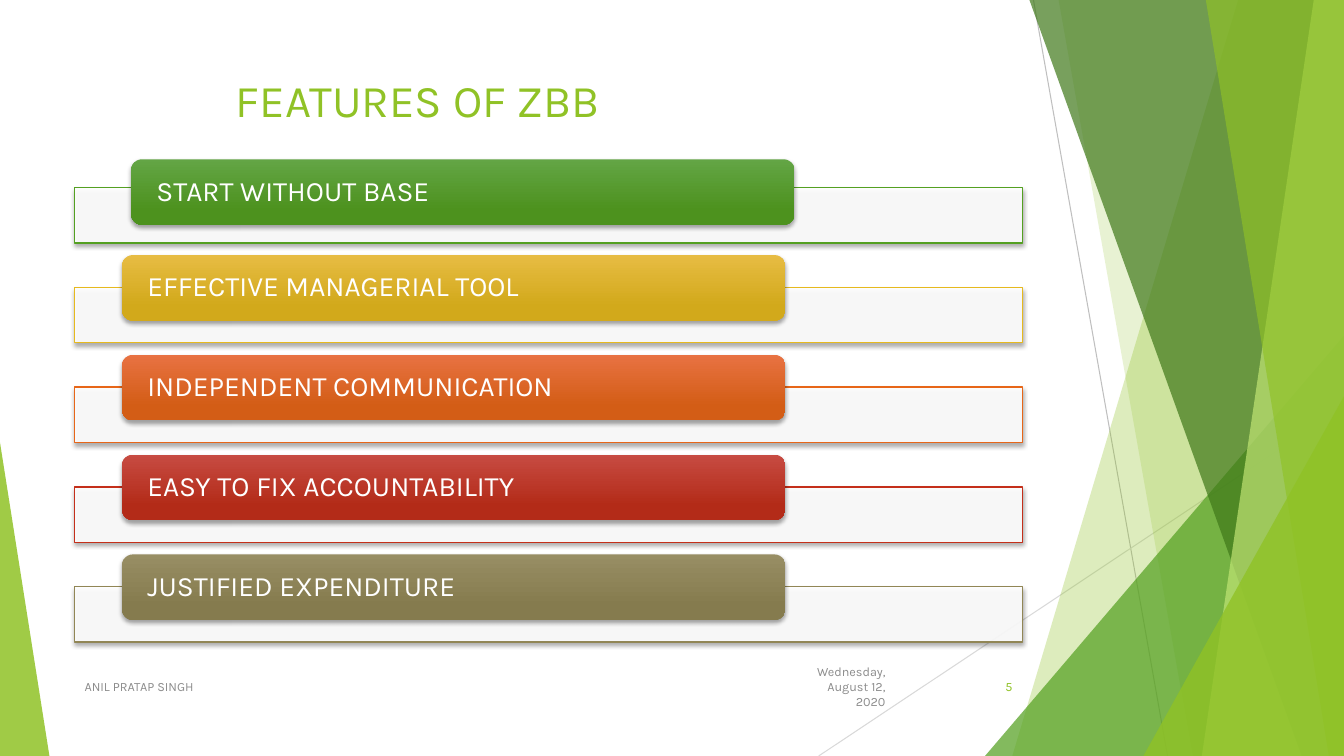
import pptx
import pptx.util
import pptx.dml.color
import pptx.enum.shapes
import pptx.enum.text
import pptx.oxml
import pptx.oxml.ns

Inches = pptx.util.Inches
Pt = pptx.util.Pt
RGBColor = pptx.dml.color.RGBColor
Shape = pptx.enum.shapes.MSO_SHAPE
Align = pptx.enum.text.PP_ALIGN
Anchor = pptx.enum.text.MSO_ANCHOR

FONT = "Karla"
WHITE = RGBColor(0xFF, 0xFF, 0xFF)
GRAY = RGBColor(0x8C, 0x8C, 0x8C)
SILVER = RGBColor(0xBF, 0xBF, 0xBF)
PALE_GRAY = RGBColor(0xD9, 0xD9, 0xD9)
LIME = RGBColor(0x90, 0xC2, 0x26)
PALE_LIME = RGBColor(0xC0, 0xE4, 0x74)
GREEN = RGBColor(0x54, 0xA0, 0x21)
DARK_GREEN = RGBColor(0x3F, 0x78, 0x19)
GOLD = RGBColor(0xE6, 0xB9, 0x1E)
ORANGE = RGBColor(0xE7, 0x66, 0x18)
RED = RGBColor(0xC4, 0x2F, 0x1A)
OLIVE = RGBColor(0x91, 0x86, 0x55)

FEATURES = [
    ("START WITHOUT BASE", GREEN, RGBColor(0x63, 0xA5, 0x45), RGBColor(0x4D, 0x92, 0x1E)),
    ("EFFECTIVE MANAGERIAL TOOL", GOLD, RGBColor(0xE7, 0xBC, 0x43), RGBColor(0xD2, 0xA9, 0x1B)),
    ("INDEPENDENT COMMUNICATION", ORANGE, RGBColor(0xE8, 0x72, 0x42), RGBColor(0xD3, 0x5D, 0x16)),
    ("EASY TO FIX ACCOUNTABILITY", RED, RGBColor(0xC7, 0x4B, 0x42), RGBColor(0xB3, 0x2B, 0x18)),
    ("JUSTIFIED EXPENDITURE", OLIVE, RGBColor(0x98, 0x8E, 0x64), RGBColor(0x85, 0x7B, 0x4E)),
]
LEFT = 0.74
ROW_PITCH = 0.99


def append_xml(parent, xml):
    namespace = pptx.oxml.ns.nsdecls("a")
    parent.append(pptx.oxml.parse_xml(xml.replace("/>", f" {namespace}/>", 1)
                                      if xml.endswith("/>") and xml.count("<") == 1
                                      else xml.replace(">", f" {namespace}>", 1)))


def fill_solid(shape, color, opacity):
    shape.fill.solid()
    shape.fill.fore_color.rgb = color
    color_element = shape.fill._xPr.find(".//" + pptx.oxml.ns.qn("a:srgbClr"))
    append_xml(color_element, f'<a:alpha val="{opacity * 1000}"/>')


def add_shadow(shape):
    shape.shadow.inherit = False
    effects = shape._element.spPr.find(pptx.oxml.ns.qn("a:effectLst"))
    append_xml(effects, f'<a:outerShdw blurRad="{Pt(3)}" dist="{Pt(2)}" dir="5400000" rotWithShape="0">'
                        '<a:srgbClr val="000000"><a:alpha val="35000"/></a:srgbClr></a:outerShdw>')


def add_thin_line(page, start, end, color):
    line = page.shapes.add_connector(pptx.enum.shapes.MSO_CONNECTOR.STRAIGHT,
                                     *map(Inches, start + end))
    line.line.color.rgb = color
    line.line.width = Pt(0.75)
    append_xml(line._element.spPr, "<a:effectLst/>")


def add_facet(page, top_left, top_right, bottom_right, bottom_left, color, opacity):
    corners = [(top_right, 0), (bottom_right, 7.5), (bottom_left, 7.5)]
    builder = page.shapes.build_freeform(Inches(top_left), 0, 1.0)
    builder.add_line_segments([(Inches(x), Inches(y)) for x, y in corners], close=True)
    facet = builder.convert_to_shape()
    facet.shadow.inherit = False
    fill_solid(facet, color, opacity)
    facet.line.fill.background()


def add_triangle(page, left, top, width, apex, color, opacity):
    triangle = page.shapes.add_shape(Shape.ISOSCELES_TRIANGLE, Inches(left), Inches(top),
                                     Inches(width), Inches(7.5 - top))
    triangle.adjustments[0] = apex
    triangle.shadow.inherit = False
    fill_solid(triangle, color, opacity)
    triangle.line.fill.background()


def write_text(shape, text, size, color, align=Align.LEFT):
    frame = shape.text_frame
    frame.word_wrap = True
    frame.vertical_anchor = Anchor.MIDDLE
    frame.text = text
    para = frame.paragraphs[0]
    para.alignment = align
    para.font.size = Pt(size)
    para.font.name = FONT
    para.font.color.rgb = color
    return para


def add_backdrop(page):
    add_thin_line(page, (10.25, 0), (11.58, 7.5), SILVER)
    add_thin_line(page, (13.33, 4.03), (8.12, 7.5), PALE_GRAY)
    add_facet(page, 12.28, 13.33, 13.33, 10.04, LIME, 30)
    add_facet(page, 10.5, 13.33, 13.33, 11.83, LIME, 20)
    add_triangle(page, 9.77, 3.33, 3.56, 1, GREEN, 72)
    add_facet(page, 10.21, 13.33, 13.33, 12.91, DARK_GREEN, 70)
    add_facet(page, 13.03, 13.33, 13.33, 11.92, PALE_LIME, 70)
    add_facet(page, 11.96, 13.33, 13.33, 13.18, LIME, 65)
    add_triangle(page, 11.34, 3.93, 1.99, 1, LIME, 80)
    add_triangle(page, 0, 4.39, 0.49, 0, LIME, 85)


def add_title(page):
    title = page.shapes.title
    title.left, title.top, title.width, title.height = map(Inches, (LEFT, 0.67, 9.4, 0.64))
    title.text_frame.margin_left = Inches(1.6)
    write_text(title, "FEATURES OF ZBB", 32.4, LIME)


def add_feature(page, tab_left, tab_top, bar_top, text, outline, light, dark):
    bar = page.shapes.add_shape(Shape.RECTANGLE, Inches(LEFT), Inches(bar_top),
                                Inches(9.4), Inches(0.55))
    fill_solid(bar, WHITE, 90)
    bar.line.color.rgb = outline
    bar.line.width = Pt(1)
    add_shadow(bar)

    tab = page.shapes.add_shape(Shape.ROUNDED_RECTANGLE, Inches(tab_left), Inches(tab_top),
                                Inches(6.58), Inches(0.65))
    tab.fill.gradient()
    tab.fill.gradient_angle = 270
    for stop, position, color in zip(tab.fill.gradient_stops, (0, 0.78), (light, dark)):
        stop.position = position
        stop.color.rgb = color
    tab.line.fill.background()
    add_shadow(tab)
    frame = tab.text_frame
    frame.margin_left = frame.margin_right = Inches(0.22)
    frame.margin_top = frame.margin_bottom = 0
    para = write_text(tab, text, 20, WHITE)
    para.line_spacing = 0.9


def add_footer(page, left, width, text, color, align):
    box = page.shapes.add_textbox(Inches(left), Inches(6.61), Inches(width), Inches(0.4))
    write_text(box, text, 9, color, align)


def main():
    deck = pptx.Presentation()
    deck.slide_width = Inches(13.33)
    deck.slide_height = Inches(7.5)
    page = deck.slides.add_slide(deck.slide_layouts.get_by_name("Title Only"))
    add_backdrop(page)
    add_title(page)
    for row, feature in enumerate(FEATURES):
        tab_left, first_top = (1.3, 1.58) if row == 0 else (1.21, 1.54)
        offset = row * ROW_PITCH
        add_feature(page, tab_left, first_top + offset, 1.86 + offset, *feature)
    add_footer(page, 7.88, 1, "Wednesday, August 12, 2020", GRAY, Align.RIGHT)
    add_footer(page, LEFT, 6.89, "ANIL PRATAP SINGH", GRAY, Align.LEFT)
    add_footer(page, 9.39, 0.75, "5", LIME, Align.RIGHT)
    deck.save("out.pptx")


if __name__ == "__main__":
    main()
